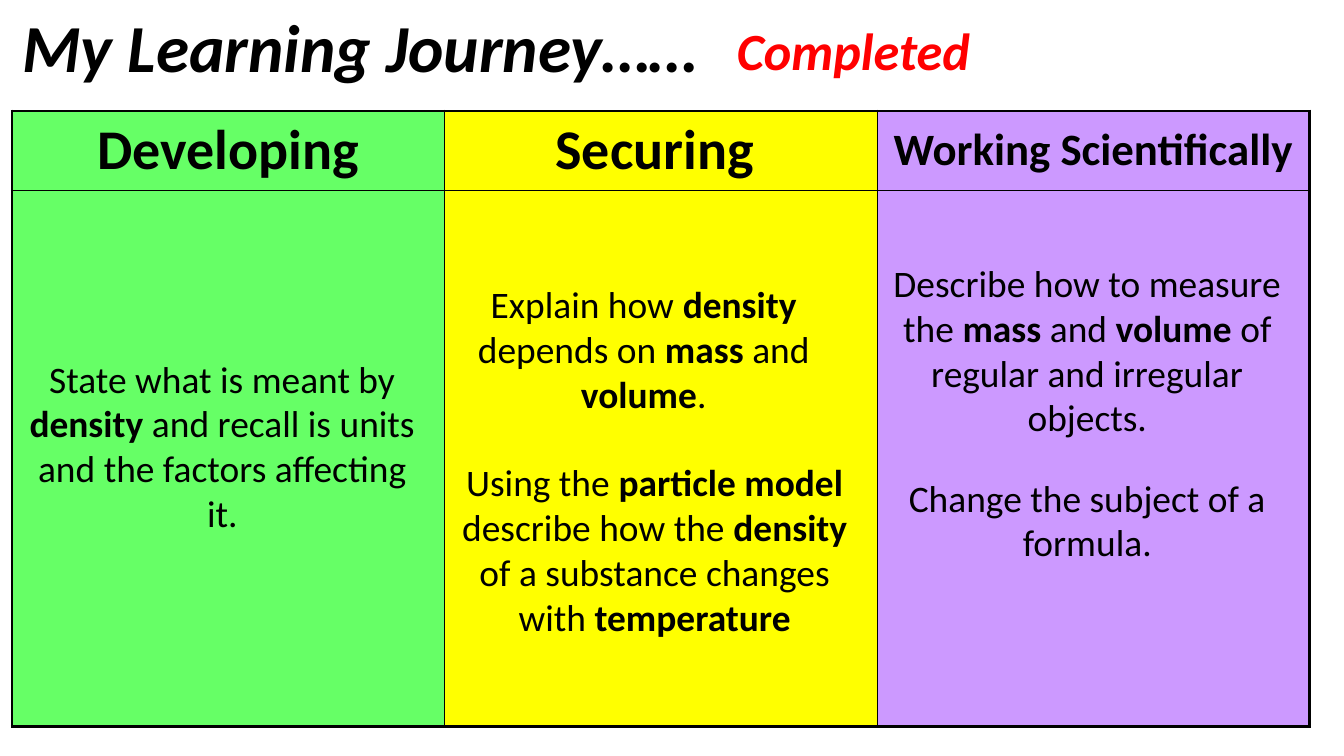
from dataclasses import dataclass

from lxml import etree
from pptx import Presentation
from pptx import util as u
from pptx.dml import color
from pptx.enum import text
from pptx.oxml import ns

COLOURS = {
    "black": "000000",
    "red": "FF0000",
    "green": "66FF66",
    "yellow": "FFFF00",
    "purple": "CC99FF",
}
LEFT, COLUMN_WIDTH = 0.12, 4.29
ROW_HEIGHTS = (0.79, 5.32)
OUTER_LINE, INNER_LINE = 2.25, 1
HEADLINE = {"bold": True, "italic": True}
CENTRE = text.PP_ALIGN.CENTER


@dataclass(frozen=True)
class Stage:
    heading: str
    size: float
    fill: str


@dataclass(frozen=True)
class Goal:
    left: float
    top: float
    height: float
    wording: str


STAGES = (
    Stage("Developing", 40, "green"),
    Stage("Securing ", 40, "yellow"),
    Stage("Working Scientifically", 32, "purple"),
)
GOALS = (
    Goal(0.12, 3.48, 1.9,
         "State what is meant by *density *and recall is units and the factors affecting it."),
    Goal(4.3, 2.74, 1.45, "Explain how *density* depends on *mass* and *volume*."),
    Goal(4.41, 4.51, 1.9,
         "Using the *particle model *describe how the *density *of a substance "
         "changes with *temperature*"),
    Goal(8.7, 2.53, 1.9,
         "Describe how to measure the *mass* and *volume* of regular and irregular objects."),
    Goal(8.7, 4.66, 1, "Change the subject of a formula."),
)


def rgb(name: str) -> color.RGBColor:
    """Return the named colour."""
    return color.RGBColor.from_string(COLOURS[name])


def add_run(paragraph, wording: str, size: float, ink: str = "black", **style) -> None:
    """Append a formatted run to the paragraph."""
    run = paragraph.add_run()
    run.text = wording
    for attribute, value in {"name": "Calibri", "size": u.Pt(size), **style}.items():
        setattr(run.font, attribute, value)
    run.font.color.rgb = rgb(ink)


def format_frame(frame) -> None:
    """Give a text frame wrapping, a top anchor and a fixed size."""
    settings = {
        "word_wrap": True,
        "vertical_anchor": text.MSO_ANCHOR.TOP,
        "auto_size": text.MSO_AUTO_SIZE.NONE,
    }
    for attribute, value in settings.items():
        setattr(frame, attribute, value)


def add_box(slide, left: float, top: float, width: float, height: float):
    """Add a text box and return its first paragraph."""
    frame = slide.shapes.add_textbox(*map(u.Inches, (left, top, width, height))).text_frame
    format_frame(frame)
    return frame.paragraphs[0]


def add_title(slide) -> None:
    """Place and fill the title."""
    title = slide.shapes.title
    place = {"left": LEFT, "top": 0, "width": 9.57, "height": 1.85}
    for attribute, value in place.items():
        setattr(title, attribute, u.Inches(value))
    format_frame(title.text_frame)
    paragraph = title.text_frame.paragraphs[0]
    paragraph.alignment = text.PP_ALIGN.LEFT
    add_run(paragraph, "My Learning Journey……", 48, **HEADLINE)


def set_borders(cell, widths: dict[str, float]) -> None:
    """Draw black cell borders of the given widths, keyed by side."""
    properties = cell._tc.get_or_add_tcPr()
    for position, (side, width) in enumerate(widths.items()):
        line = etree.Element(ns.qn(f"a:ln{side}"), w=str(u.Pt(width)))
        fill = etree.SubElement(line, ns.qn("a:solidFill"))
        etree.SubElement(fill, ns.qn("a:srgbClr"), val=COLOURS["black"])
        properties.insert(position, line)


def add_stages(slide) -> None:
    """Add the table with one coloured column per stage."""
    size = (COLUMN_WIDTH * len(STAGES), sum(ROW_HEIGHTS))
    table = slide.shapes.add_table(
        len(ROW_HEIGHTS), len(STAGES), *map(u.Inches, (LEFT, 1.1, *size))
    ).table
    table.first_row = table.horz_banding = False
    for row, height in zip(table.rows, ROW_HEIGHTS):
        row.height = u.Inches(height)
    last_row, last_column = len(ROW_HEIGHTS) - 1, len(STAGES) - 1
    for column, stage in enumerate(STAGES):
        table.columns[column].width = u.Inches(COLUMN_WIDTH)
        for row in range(len(ROW_HEIGHTS)):
            cell = table.cell(row, column)
            cell.fill.solid()
            cell.fill.fore_color.rgb = rgb(stage.fill)
            outer = {"L": column == 0, "R": column == last_column,
                     "T": row == 0, "B": row == last_row}
            set_borders(cell, {side: OUTER_LINE if edge else INNER_LINE
                               for side, edge in outer.items()})
        header = table.cell(0, column)
        header.vertical_anchor = text.MSO_ANCHOR.MIDDLE
        paragraph = header.text_frame.paragraphs[0]
        paragraph.alignment = CENTRE
        add_run(paragraph, stage.heading, stage.size, bold=True)


def add_goal(slide, goal: Goal) -> None:
    """Add a learning goal whose starred words are bold."""
    paragraph = add_box(slide, goal.left, goal.top, 4.17, goal.height)
    paragraph.alignment = CENTRE
    for position, part in enumerate(goal.wording.split("*")):
        if part:
            add_run(paragraph, part, 26.7, bold=position % 2 == 1)


def main() -> None:
    """Build and save the slide."""
    deck = Presentation()
    deck.slide_width, deck.slide_height = u.Inches(13.33), u.Inches(7.5)
    slide = deck.slides.add_slide(deck.slide_layouts.get_by_name("Title Only"))
    add_title(slide)
    add_stages(slide)
    add_run(add_box(slide, 7.21, 0.13, 3.64, 0.73), "Completed", 37.3, "red", **HEADLINE)
    for goal in GOALS:
        add_goal(slide, goal)
    deck.save("out.pptx")


if __name__ == "__main__":
    main()
